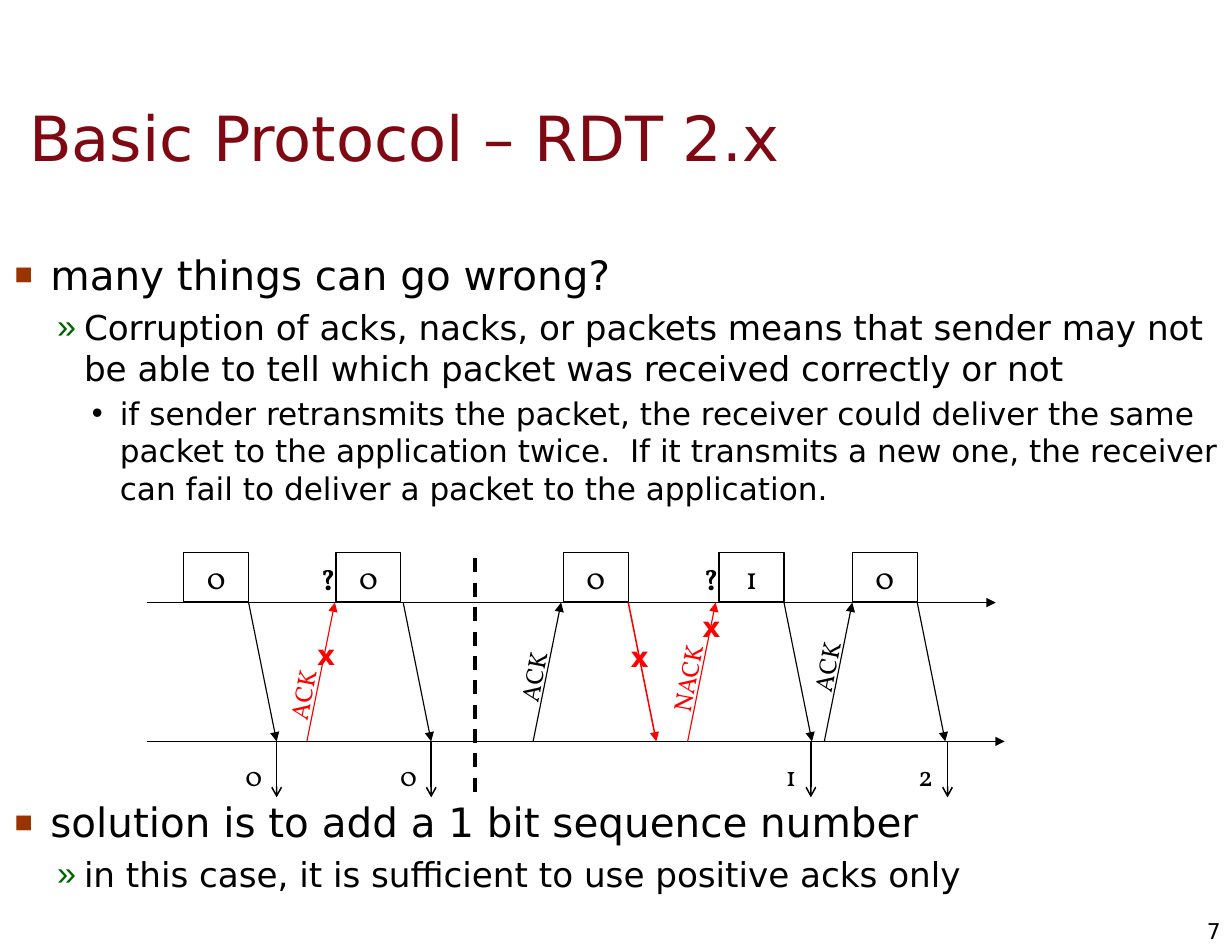
import pptx
from lxml import etree
from pptx.dml.color import RGBColor
from pptx.enum.dml import MSO_LINE
from pptx.enum.shapes import MSO_CONNECTOR, MSO_SHAPE
from pptx.enum.text import MSO_ANCHOR, MSO_AUTO_SIZE, PP_ALIGN
from pptx.oxml.ns import qn
from pptx.util import Inches, Pt

BLACK = RGBColor(0x00, 0x00, 0x00)
WHITE = RGBColor(0xFF, 0xFF, 0xFF)
RED = RGBColor(0xFF, 0x00, 0x00)
MAROON = RGBColor(0x7F, 0x08, 0x13)
BROWN = RGBColor(0x99, 0x33, 0x00)
GREEN = RGBColor(0x00, 0x66, 0x00)
SANS, SERIF = "DejaVu Sans", "Vollkorn"

TITLE = "Basic Protocol – RDT 2.x"
# level, points before, text
BODY = [
    (0, 0, "many things can go wrong?"),
    (1, 5, "Corruption of acks, nacks, or packets means that sender may not be "
           "able to tell which packet was received correctly or not"),
    (2, 4, "if sender retransmits the packet, the receiver could deliver the same "
           "packet to the application twice.  If it transmits a new one, the "
           "receiver can fail to deliver a packet to the application."),
    (0, 187, "solution is to add a 1 bit sequence number"),
    (1, 5, "in this case, it is sufficient to use positive acks only"),
]
# size, left margin, hanging indent, bullet, bullet colour, bullet percent
LEVELS = [
    (26, 0.32, 0.32, "■", BROWN, 75),
    (22, 0.62, 0.24, "»", GREEN, 100),
    (20, 0.94, 0.25, "•", BLACK, 100),
]

SENDER_Y, RECEIVER_Y, DELIVERY_Y = 5.38, 6.62, 7.12
TRANSIT = 0.25
TIMELINES = [(SENDER_Y, 8.89), (RECEIVER_Y, 8.97)]
PACKETS = [(1.64, "0"), (3.0, "0"), (5.03, "0"), (6.42, "1"), (7.61, "0")]
SENDS = [(2.22, BLACK), (3.6, BLACK), (5.61, RED), (7.0, BLACK), (8.19, BLACK)]
# start of the arrow, then label text, left, top, width and colour
REPLIES = [
    (2.74, "ACK", 2.35, 6.02, 0.7, RED),
    (4.76, "ACK", 4.41, 5.86, 0.7, BLACK),
    (6.14, "NACK", 5.69, 5.87, 0.89, RED),
    (7.36, "ACK", 7.03, 5.77, 0.7, BLACK),
]
DELIVERIES = [(2.47, "0"), (3.85, "0"), (7.24, "1"), (8.46, "2")]
CORRUPTIONS = [(2.67, 5.64), (5.47, 5.66), (6.11, 5.39)]
DOUBTS = [2.76, 6.18]


def add_run(paragraph, text, size, font, color, bold=False):
    run = paragraph.add_run()
    run.text = text
    run.font.size = Pt(size)
    run.font.name = font
    run.font.color.rgb = color
    run.font.bold = bold


def add_label(slide, box, text, size, font, color, bold=False,
              align=PP_ALIGN.RIGHT, anchor=MSO_ANCHOR.TOP, wrap=False):
    shape = slide.shapes.add_textbox(*map(Inches, box))
    frame = shape.text_frame
    frame.word_wrap = wrap
    frame.vertical_anchor = anchor
    frame.paragraphs[0].alignment = align
    add_run(frame.paragraphs[0], text, size, font, color, bold)
    return shape


def add_line(slide, start, end, color=BLACK, width=0.75, arrow="triangle"):
    line = slide.shapes.add_connector(
        MSO_CONNECTOR.STRAIGHT, *map(Inches, (*start, *end)))
    line.line.color.rgb = color
    line.line.width = Pt(width)
    properties = line._element.spPr
    if arrow:
        etree.SubElement(properties.find(qn("a:ln")), qn("a:tailEnd"), type=arrow)
    etree.SubElement(properties, qn("a:effectLst"))
    return line


def set_bullet(paragraph, margin, hanging, character, color, percent):
    properties = paragraph._p.get_or_add_pPr()
    properties.set("marL", str(Inches(margin)))
    properties.set("indent", str(-Inches(hanging)))
    bullet_color = etree.SubElement(properties, qn("a:buClr"))
    etree.SubElement(bullet_color, qn("a:srgbClr"), val=str(color))
    etree.SubElement(properties, qn("a:buSzPct"), val=str(percent * 1000))
    etree.SubElement(properties, qn("a:buChar"), char=character)


def place(shape, left, top, width, height, anchor):
    shape.left, shape.top = Inches(left), Inches(top)
    shape.width, shape.height = Inches(width), Inches(height)
    frame = shape.text_frame
    frame.auto_size = MSO_AUTO_SIZE.NONE
    frame.word_wrap = True
    frame.vertical_anchor = anchor
    frame.margin_left = frame.margin_right = Inches(0.11)
    frame.margin_top = frame.margin_bottom = Inches(0.06)
    return frame


def add_text(slide):
    frame = place(slide.shapes.title, 0.15, 0.7, 10.53, 1.04, MSO_ANCHOR.MIDDLE)
    frame.paragraphs[0].alignment = PP_ALIGN.LEFT
    add_run(frame.paragraphs[0], TITLE, 40, SANS, MAROON)

    frame = place(slide.placeholders[1], 0.02, 2.17, 10.98, 6.33, MSO_ANCHOR.TOP)
    for index, (level, before, text) in enumerate(BODY):
        paragraph = frame.add_paragraph() if index else frame.paragraphs[0]
        size, *bullet = LEVELS[level]
        paragraph.level = level
        set_bullet(paragraph, *bullet)
        paragraph.space_before = Pt(before)
        paragraph.line_spacing = Pt(1.2 * size)
        add_run(paragraph, text, size, SANS, BLACK)

    number = add_label(slide, (10.56, 8.19, 0.34, 0.24), "7", 14, SANS, BLACK,
                       anchor=MSO_ANCHOR.MIDDLE)
    frame = number.text_frame
    frame.margin_left = frame.margin_right = 0
    frame.margin_top = frame.margin_bottom = 0


def add_packet(slide, left, text):
    shape = slide.shapes.add_shape(
        MSO_SHAPE.RECTANGLE, *map(Inches, (left, 4.93, 0.58, 0.44)))
    shape.shadow.inherit = False
    shape.fill.solid()
    shape.fill.fore_color.rgb = WHITE
    shape.line.color.rgb = BLACK
    shape.line.width = Pt(0.75)
    shape.text_frame.vertical_anchor = MSO_ANCHOR.MIDDLE
    paragraph = shape.text_frame.paragraphs[0]
    paragraph.alignment = PP_ALIGN.CENTER
    add_run(paragraph, text, 20, SERIF, BLACK)


def add_timing_diagram(slide):
    for y, end in TIMELINES:
        add_line(slide, (1.31, y), (end, y))
    for left, text in PACKETS:
        add_packet(slide, left, text)
    for x, color in SENDS:
        add_line(slide, (x, SENDER_Y), (x + TRANSIT, RECEIVER_Y), color,
                 1 if color == RED else 0.75)
    for x, text, left, top, width, color in REPLIES:
        add_line(slide, (x, RECEIVER_Y), (x + TRANSIT, SENDER_Y), color)
        label = add_label(slide, (left, top, width, 0.37), text, 16, SERIF, color,
                          align=PP_ALIGN.CENTER, anchor=MSO_ANCHOR.MIDDLE)
        label.rotation = 281
    for x, text in DELIVERIES:
        add_line(slide, (x, RECEIVER_Y), (x, DELIVERY_Y), width=1, arrow="arrow")
        add_label(slide, (x - 0.42, 6.72, 0.39, 0.4), text, 18, SERIF, BLACK,
                  wrap=True)
    for left, top in CORRUPTIONS:
        add_label(slide, (left, top, 0.42, 0.4), "x", 18, SANS, RED, bold=True,
                  wrap=True)
    for left in DOUBTS:
        add_label(slide, (left, 4.97, 0.31, 0.4), "?", 18, SERIF, BLACK, bold=True)
    divider = add_line(slide, (4.24, 7.07), (4.24, 4.94), width=2.25, arrow=None)
    divider.line.dash_style = MSO_LINE.DASH


def main():
    presentation = pptx.Presentation()
    presentation.slide_width = Inches(11)
    presentation.slide_height = Inches(8.5)
    slide = presentation.slides.add_slide(presentation.slide_layouts[1])
    add_text(slide)
    add_timing_diagram(slide)
    presentation.save("out.pptx")


if __name__ == "__main__":
    main()
